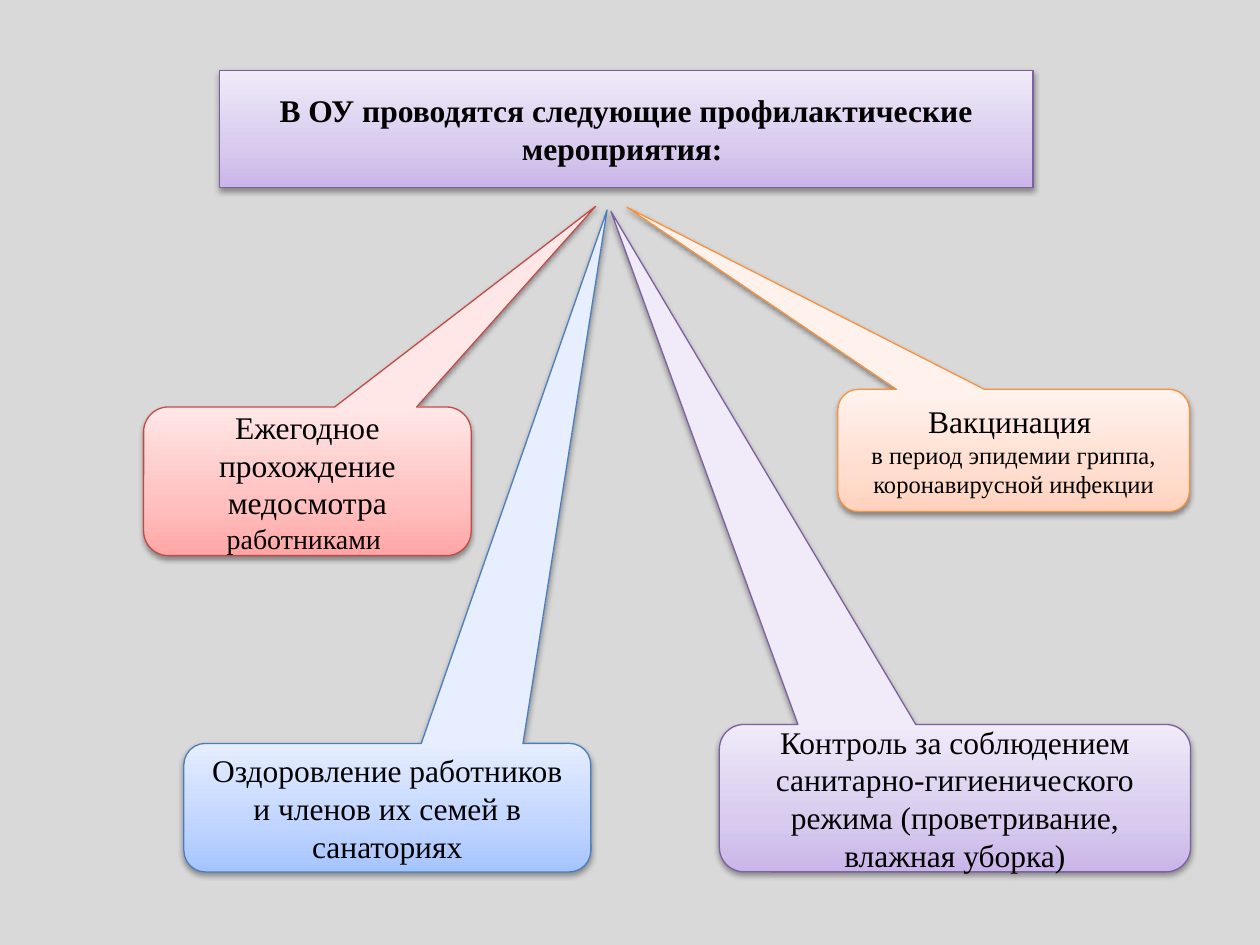
from dataclasses import dataclass
from typing import Optional

import pptx
import pptx.dml.color
import pptx.enum.shapes
import pptx.enum.text
import pptx.oxml
import pptx.oxml.ns
import pptx.util

GRID = 100  # grid units per inch
SHAPES = pptx.enum.shapes.MSO_SHAPE


@dataclass(frozen=True)
class Tint:
    """Gradient colours from bottom to top, and the outline."""
    bottom: str
    middle: str
    top: str
    line: str


@dataclass(frozen=True)
class Theme:
    font: str = "Times New Roman"
    background: str = "D9D9D9"
    text: str = "000000"
    main: int = 18
    medium: int = 16
    small: int = 14
    line_width: float = 0.75
    middle_stop: int = 35
    violet: Tint = Tint("C9B5E8", "D8CBEE", "F0EAF9", "7D60A0")
    red: Tint = Tint("FFA6A5", "FFC0BF", "FFE7E7", "BF4C48")
    orange: Tint = Tint("FFD2BD", "FFDED0", "FFF2ED", "F69240")
    blue: Tint = Tint("A4C4FF", "BFD4FF", "E6EEFF", "4B7EBC")


THEME = Theme()


@dataclass(frozen=True)
class Run:
    text: str
    size: int = THEME.main


@dataclass(frozen=True)
class Pointer:
    """Tip of a callout, as shares of its box measured from the centre."""
    x: float
    y: float
    flipped: bool = True


@dataclass(frozen=True)
class Panel:
    left: int
    top: int
    width: int
    height: int
    tint: Tint
    paragraphs: tuple[tuple[Run, ...], ...]
    pointer: Optional[Pointer] = None
    bold: bool = False


HEADING = Panel(
    174, 56, 646, 93, THEME.violet,
    ((Run("В ОУ проводятся следующие профилактические мероприятия: "),),),
    bold=True)

MEASURES = (
    Panel(114, 323, 260, 118, THEME.red,
          ((Run("Ежегодное прохождение медосмотра "),
            Run("работниками ", THEME.medium)),),
          Pointer(0.88, -1.85, flipped=False)),
    Panel(665, 309, 279, 97, THEME.orange,
          ((Run("Вакцинация "),),
           (Run("в период эпидемии гриппа, коронавирусной инфекции",
                THEME.small),)),
          Pointer(1.1, -1.99)),
    Panel(146, 590, 323, 102, THEME.blue,
          ((Run("Оздоровление работников и членов их семей в санаториях"),),),
          Pointer(-0.54, -4.65)),
    Panel(571, 575, 374, 117, THEME.violet,
          ((Run("Контроль за соблюдением санитарно-гигиенического режима "
                "(проветривание, влажная уборка)"),),),
          Pointer(0.73, -3.98)),
)


def grid(units: int) -> int:
    return pptx.util.Inches(units / GRID)


def rgb(value: str) -> pptx.dml.color.RGBColor:
    return pptx.dml.color.RGBColor.from_string(value)


def paint(shape, tint: Tint) -> None:
    """Apply the three-stop gradient, the outline and the soft shadow."""
    shape.fill.gradient()
    shape.fill.gradient_angle = 90
    stops = shape._element.spPr.find(".//" + pptx.oxml.ns.qn("a:gsLst"))
    for stop in list(stops):
        stops.remove(stop)
    namespace = pptx.oxml.ns.nsdecls("a")
    for position, color in ((0, tint.bottom), (THEME.middle_stop, tint.middle),
                            (100, tint.top)):
        stops.append(pptx.oxml.parse_xml(
            f'<a:gs {namespace} pos="{position * 1000}">'
            f'<a:srgbClr val="{color}"/></a:gs>'))

    shape.line.color.rgb = rgb(tint.line)
    shape.line.width = pptx.util.Pt(THEME.line_width)

    shape.shadow.inherit = False
    effects = shape._element.spPr.find(pptx.oxml.ns.qn("a:effectLst"))
    blur, distance = pptx.util.Pt(3.1), pptx.util.Pt(1.6)
    effects.append(pptx.oxml.parse_xml(
        f'<a:outerShdw {namespace} blurRad="{blur}" dist="{distance}" '
        'dir="5400000" rotWithShape="0"><a:srgbClr val="000000">'
        '<a:alpha val="38000"/></a:srgbClr></a:outerShdw>'))


def write(shape, panel: Panel) -> None:
    frame = shape.text_frame
    frame.word_wrap = True
    frame.vertical_anchor = pptx.enum.text.MSO_ANCHOR.MIDDLE
    for index, runs in enumerate(panel.paragraphs):
        paragraph = frame.add_paragraph() if index else frame.paragraphs[0]
        paragraph.alignment = pptx.enum.text.PP_ALIGN.CENTER
        paragraph.font.name = THEME.font
        paragraph.font.bold = panel.bold
        paragraph.font.color.rgb = rgb(THEME.text)
        paragraph.font.size = pptx.util.Pt(runs[0].size)
        for part in runs:
            run = paragraph.add_run()
            run.text = part.text
            if part.size != runs[0].size:
                run.font.size = pptx.util.Pt(part.size)


def draw(slide, panel: Panel) -> None:
    kind = (SHAPES.ROUNDED_RECTANGULAR_CALLOUT if panel.pointer
            else SHAPES.RECTANGLE)
    shape = slide.shapes.add_shape(
        kind, grid(panel.left), grid(panel.top),
        grid(panel.width), grid(panel.height))
    if panel.pointer:
        shape.adjustments[0] = panel.pointer.x
        shape.adjustments[1] = panel.pointer.y
        if panel.pointer.flipped:
            shape._element.spPr.xfrm.set("flipH", "1")
    paint(shape, panel.tint)
    write(shape, panel)


def main() -> None:
    presentation = pptx.Presentation()
    presentation.slide_width = pptx.util.Inches(10)
    presentation.slide_height = pptx.util.Inches(7.5)
    slide = presentation.slides.add_slide(presentation.slide_layouts[6])
    slide.background.fill.solid()
    slide.background.fill.fore_color.rgb = rgb(THEME.background)

    # Heading, then the measures pointing up to it
    for panel in (HEADING, *MEASURES):
        draw(slide, panel)

    presentation.save("out.pptx")


if __name__ == "__main__":
    main()
